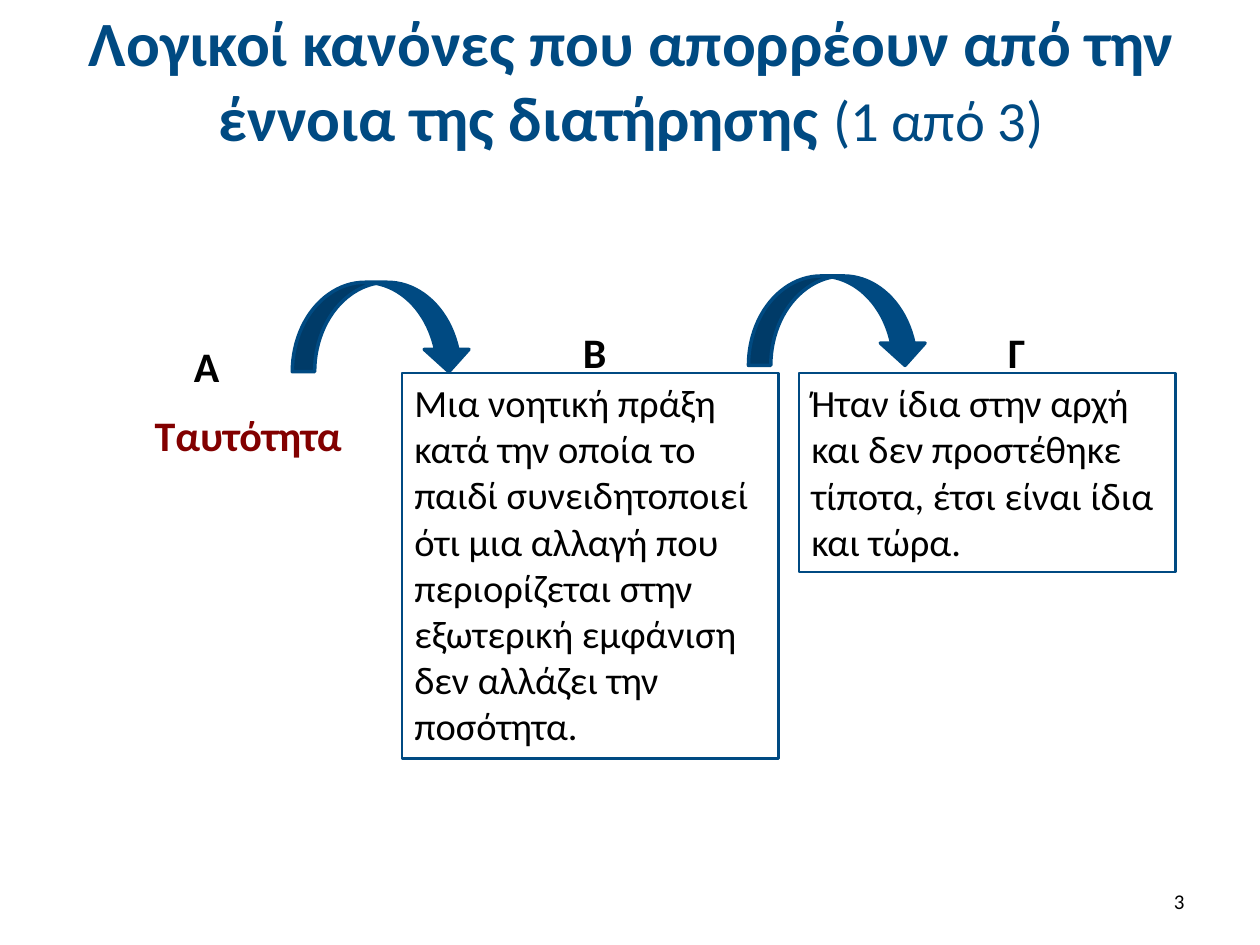
from dataclasses import dataclass

from pptx import Presentation
from pptx.dml.color import RGBColor
from pptx.enum.shapes import MSO_SHAPE
from pptx.enum.text import MSO_ANCHOR, PP_ALIGN
from pptx.util import Inches, Pt

NAVY = RGBColor(0x00, 0x4A, 0x82)
MAROON = RGBColor(0x82, 0x00, 0x00)
BLACK = RGBColor(0x00, 0x00, 0x00)

# Grid of 100 columns by 75 rows
WIDTH, HEIGHT = Inches(10), Inches(7.5)
COL, ROW = WIDTH / 100, HEIGHT / 75


@dataclass(frozen=True)
class Area:
    col: float
    row: float
    cols: float
    rows: float

    def box(self) -> tuple[int, int, int, int]:
        return (round(self.col * COL), round(self.row * ROW),
                round(self.cols * COL), round(self.rows * ROW))


@dataclass(frozen=True)
class Run:
    text: str
    size: float
    color: RGBColor = BLACK
    bold: bool = False


@dataclass(frozen=True)
class Label:
    area: Area
    runs: tuple[Run, ...]
    align: PP_ALIGN = PP_ALIGN.CENTER
    anchor: MSO_ANCHOR = MSO_ANCHOR.TOP


@dataclass(frozen=True)
class Step:
    arrow: tuple[float, float]
    box: Area
    text: str


def write(sp, runs: tuple[Run, ...], align: PP_ALIGN, anchor: MSO_ANCHOR) -> None:
    tf = sp.text_frame
    tf.word_wrap = True
    tf.vertical_anchor = anchor
    p = tf.paragraphs[0]
    p.alignment = align
    for run in runs:
        r = p.add_run()
        r.text = run.text
        r.font.color.rgb = run.color
        fmt = {"name": "Calibri", "size": Pt(run.size), "bold": run.bold}
        for name, value in fmt.items():
            setattr(r.font, name, value)


def add_label(s, label: Label) -> None:
    sp = s.shapes.add_textbox(*label.area.box())
    write(sp, label.runs, label.align, label.anchor)


def add_outlined(s, kind: MSO_SHAPE, area: Area, line_width: float):
    sp = s.shapes.add_shape(kind, *area.box())
    sp.shadow.inherit = False
    sp.line.color.rgb = NAVY
    sp.line.width = Pt(line_width)
    return sp


def add_step(s, step: Step) -> None:
    arrow = add_outlined(s, MSO_SHAPE.CURVED_DOWN_ARROW,
                         Area(*step.arrow, 14.2, 7.1), 2)
    arrow.fill.solid()
    arrow.fill.fore_color.rgb = NAVY
    box = add_outlined(s, MSO_SHAPE.RECTANGLE, step.box, 1.5)
    box.fill.background()
    write(box, (Run(step.text, 22),), PP_ALIGN.LEFT, MSO_ANCHOR.TOP)


def letter(text: str, col: float, row: float) -> Label:
    return Label(Area(col, row, 6.8, 5.5), (Run(text, 24, bold=True),))


LABELS = (
    # Title
    Label(Area(5.1, 1.3, 90, 9.9), (
        Run("Λογικοί κανόνες που απορρέουν από την έννοια της διατήρησης ",
            36, NAVY, True),
        Run("(1 από 3)", 32.4, NAVY)), anchor=MSO_ANCHOR.MIDDLE),
    # Name of the rule
    Label(Area(10.6, 32, 18.2, 5.5), (Run("Ταυτότητα", 24, MAROON, True),)),
    # Column letters
    letter("Α", 13, 26.5),
    letter("Β", 43.8, 25.4),
    letter("Γ", 77.3, 25.4),
    # Slide number
    Label(Area(71.7, 69.5, 23.3, 4), (Run("3", 12),),
          PP_ALIGN.RIGHT, MSO_ANCHOR.MIDDLE),
)

STEPS = (
    Step((23.2, 22.4), Area(31.9, 29.6, 29.9, 30.6),
         "Μια νοητική πράξη κατά την οποία το παιδί συνειδητοποιεί ότι μια "
         "αλλαγή που περιορίζεται στην εξωτερική εμφάνιση δεν αλλάζει την "
         "ποσότητα."),
    Step((59.4, 21.9), Area(63.4, 29.6, 29.9, 15.8),
         "Ήταν ίδια στην αρχή και δεν προστέθηκε τίποτα, έτσι είναι ίδια "
         "και τώρα."),
)


def main() -> None:
    prs = Presentation()
    prs.slide_width, prs.slide_height = WIDTH, HEIGHT
    s = prs.slides.add_slide(prs.slide_layouts[6])
    for step in STEPS:
        add_step(s, step)
    for label in LABELS:
        add_label(s, label)
    prs.save("out.pptx")


if __name__ == "__main__":
    main()
